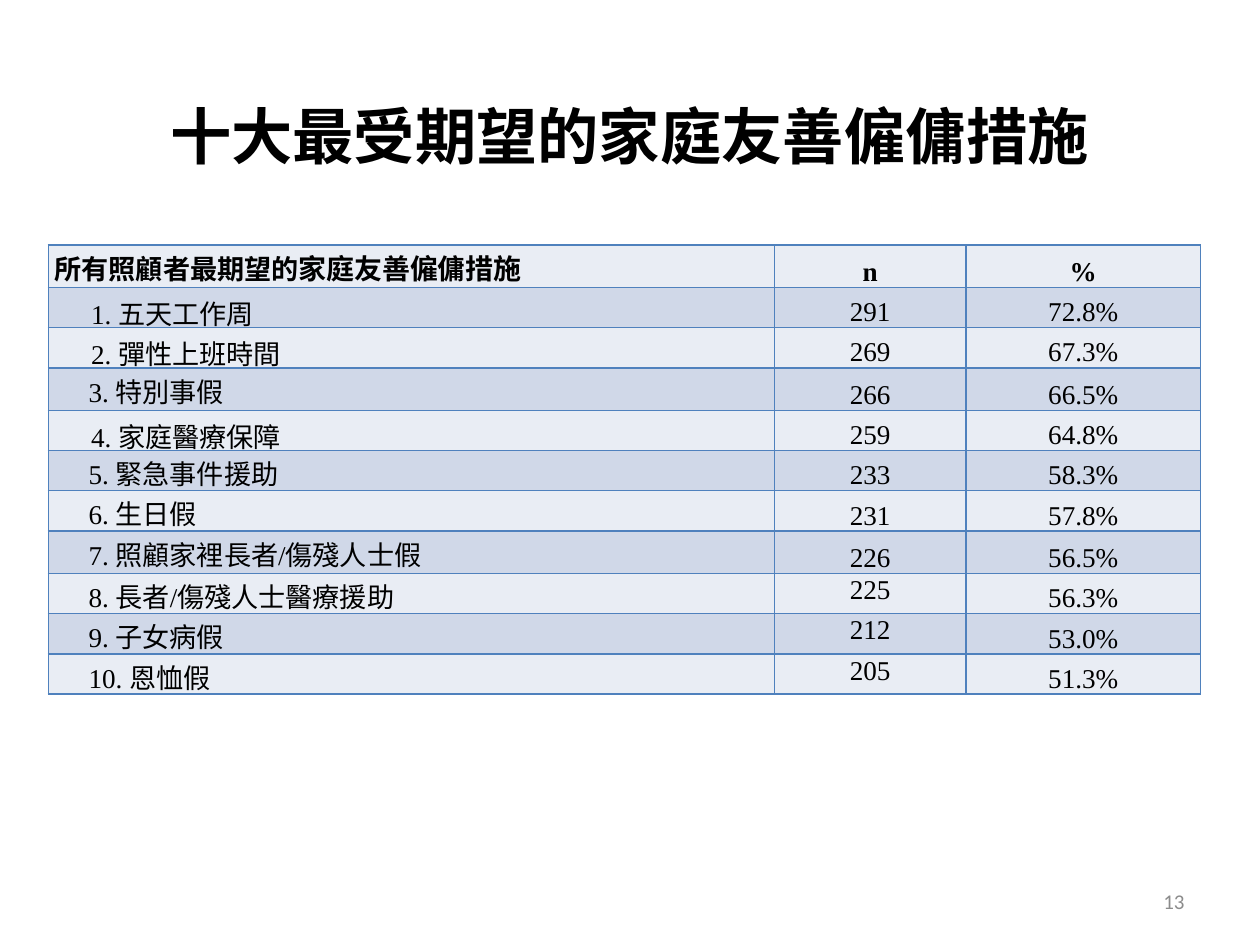
from pptx import Presentation
from pptx import util as u
from pptx.dml import color as c
from pptx.enum import text as t
from pptx.oxml import parse_xml
from pptx.oxml import ns

HEX = {"ink": "000000", "gray": "8C8C8C", "line": "4F81BD",
       "pale": "E9EDF4", "band": "D0D8E8"}
SERIF = "Times New Roman"
HEAD = [("所有照顧者最期望的", 15.5), ("家庭友善僱傭措施", 16)]
ROWS = [
    ("五天工作周", "291", "72.8%"),
    ("彈性上班時間", "269", "67.3%"),
    ("特別事假", "266", "66.5%"),
    ("家庭醫療保障", "259", "64.8%"),
    ("緊急事件援助", "233", "58.3%"),
    ("生日假", "231", "57.8%"),
    ("照顧家裡長者/傷殘人士假", "226", "56.5%"),
    ("長者/傷殘人士醫療援助", "225", "56.3%"),
    ("子女病假", "212", "53.0%"),
    ("恩恤假", "205", "51.3%"),
]
LOOSE = {1, 2, 4}
TALL = {0, 3, 7}
MID, LOW, TOP = (t.MSO_ANCHOR.MIDDLE, t.MSO_ANCHOR.BOTTOM, t.MSO_ANCHOR.TOP)
LEFT, CENTER, RIGHT, JUST = (t.PP_ALIGN.LEFT, t.PP_ALIGN.CENTER,
                             t.PP_ALIGN.RIGHT, t.PP_ALIGN.JUSTIFY)


class Deck:
    def __init__(self, wide, high):
        self.prs = Presentation()
        self.prs.slide_width, self.prs.slide_height = u.Pt(wide), u.Pt(high)
        self.slide = self.prs.slides.add_slide(self.prs.slide_layouts[5])

    def font(self, font, size, bold=False, ink="ink", name=SERIF):
        font.name, font.size, font.bold = name, u.Pt(size), bold
        font.color.rgb = c.RGBColor.from_string(HEX[ink])

    def title(self, words, box, size):
        shape = self.slide.shapes.title
        shape.left, shape.top, shape.width, shape.height = map(u.Pt, box)
        frame = shape.text_frame
        frame.text, frame.vertical_anchor = words, MID
        para = frame.paragraphs[0]
        para.alignment = CENTER
        self.font(para.font, size, True)

    def label(self, words, box, size, ink, name):
        frame = self.slide.shapes.add_textbox(*map(u.Pt, box)).text_frame
        frame.word_wrap, frame.vertical_anchor = True, MID
        para = frame.paragraphs[0]
        para.text, para.alignment = words, RIGHT
        self.font(para.font, size, False, ink, name)

    def table(self, left, top, cols, rows):
        grid = self.slide.shapes.add_table(
            len(rows), len(cols), u.Pt(left), u.Pt(top),
            u.Pt(sum(cols)), u.Pt(sum(rows))).table
        for col, wide in zip(grid.columns, cols):
            col.width = u.Pt(wide)
        for row, high in zip(grid.rows, rows):
            row.height = u.Pt(high)
        return grid

    def cell(self, cell, runs, fill, align, anchor=LOW, inset=3.6,
             space=1.07, bold=False):
        props = cell._tc.get_or_add_tcPr()
        for side in "LRTB":
            props.append(parse_xml(
                f'<a:ln{side} {ns.nsdecls("a")} w="12700"><a:solidFill>'
                f'<a:srgbClr val="{HEX["line"]}"/></a:solidFill></a:ln{side}>'))
        cell.fill.solid()
        cell.fill.fore_color.rgb = c.RGBColor.from_string(HEX[fill])
        cell.vertical_anchor = anchor
        cell.margin_left, cell.margin_right = u.Pt(inset), u.Pt(3.6)
        cell.margin_top = cell.margin_bottom = 0
        para = cell.text_frame.paragraphs[0]
        para.alignment, para.line_spacing = align, space
        self.font(para.font, runs[0][1], bold)
        for words, size in runs:
            run = para.add_run()
            run.text = words
            self.font(run.font, size, bold)


def main():
    deck = Deck(720, 540)
    deck.title("十大最受期望的家庭友善僱傭措施", (0, 32.4, 720, 90), 35)
    deck.label("13", (516, 500.5, 168, 28.75), 12, "gray", "Calibri")
    highs = [24.3 if i in TALL else 23 for i in range(len(ROWS) + 1)]
    grid = deck.table(27.6, 139.9, (414.9, 109.4, 134.2), highs)
    deck.cell(grid.cell(0, 0), HEAD, "pale", LEFT, bold=True)
    for j, words in enumerate(("n", "%"), 1):
        deck.cell(grid.cell(0, j), [(words, 15.5)], "pale", CENTER, bold=True)
    for i, (name, count, share) in enumerate(ROWS, 1):
        fill = "band" if i % 2 else "pale"
        loose = i in LOOSE
        deck.cell(grid.cell(i, 0), [(f"{i}. {name}", 15.5)], fill,
                  JUST if i > 6 else LEFT, MID if loose else LOW,
                  24.5 if loose else 23, 1.15 if loose else 1.07)
        deck.cell(grid.cell(i, 1), [(count, 15.5)], fill, CENTER,
                  TOP if i > 7 else LOW)
        deck.cell(grid.cell(i, 2), [(share, 15.5)], fill, CENTER)
    deck.prs.save("out.pptx")


if __name__ == "__main__":
    main()
